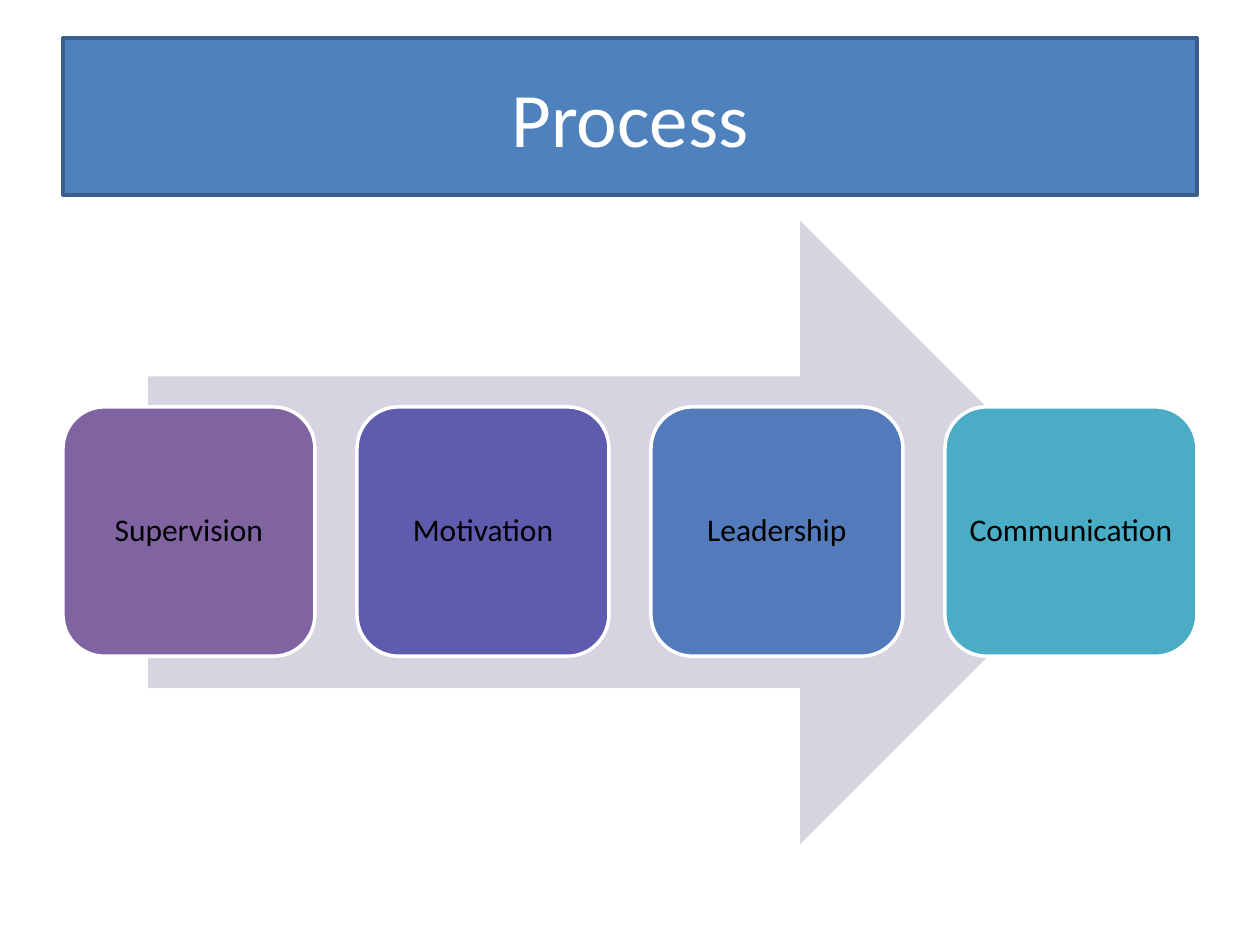
from pptx import Presentation
from pptx.dml.color import RGBColor
from pptx.enum.shapes import MSO_SHAPE as Preset
from pptx.enum.text import MSO_ANCHOR as Anchor, PP_ALIGN as Align
from pptx.util import Pt

# Content
TITLE = "Process"
STEPS = [
    ("Supervision", "8064A2"),
    ("Motivation", "5F5BAE"),
    ("Leadership", "537ABA"),
    ("Communication", "4BACC6"),
]

# Layout in points
LEFT, WIDTH = 36, 648
STEP_TOP, STEP_WIDTH, STEP_HEIGHT = 232.5, 144, 142.5
STEP_PITCH = (WIDTH - STEP_WIDTH) / (len(STEPS) - 1)


def color(value):
    return RGBColor.from_string(value)


def place(shape, left, top, width, height):
    shape.left, shape.top = Pt(left), Pt(top)
    shape.width, shape.height = Pt(width), Pt(height)


def paint(shape, fill, line=None):
    shape.fill.solid()
    shape.fill.fore_color.rgb = color(fill)
    if line:
        shape.line.color.rgb = color(line)
        shape.line.width = Pt(2)
    else:
        shape.line.fill.background()


def write(shape, text, size, font_color):
    frame = shape.text_frame
    frame.word_wrap = True
    frame.vertical_anchor = Anchor.MIDDLE
    paragraph = frame.paragraphs[0]
    paragraph.text = text
    paragraph.alignment = Align.CENTER
    paragraph.font.name = "Calibri"
    paragraph.font.size = Pt(size)
    paragraph.font.color.rgb = color(font_color)
    return paragraph


def add_preset(slide, preset, left, top, width, height, fill, line=None):
    shape = slide.shapes.add_shape(preset, Pt(left), Pt(top), Pt(width), Pt(height))
    shape.shadow.inherit = False
    paint(shape, fill, line)
    return shape


def add_step(slide, index, label, fill):
    left = LEFT + index * STEP_PITCH
    step = add_preset(slide, Preset.ROUNDED_RECTANGLE, left, STEP_TOP,
                      STEP_WIDTH, STEP_HEIGHT, fill, "FFFFFF")
    frame = step.text_frame
    frame.margin_left = frame.margin_right = Pt(5)
    frame.margin_top = frame.margin_bottom = Pt(5)
    write(step, label, 18, "000000").line_spacing = 0.9


def main():
    presentation = Presentation()
    presentation.slide_width, presentation.slide_height = Pt(720), Pt(540)
    slide = presentation.slides.add_slide(presentation.slide_layouts[5])

    # Title bar
    title = slide.shapes.title
    place(title, LEFT, 21.6, WIDTH, 90)
    paint(title, "4F81BD", "3A5F8C")
    write(title, TITLE, 44, "FFFFFF")

    # Arrow behind the steps
    add_preset(slide, Preset.RIGHT_ARROW, 84.6, 126, 550.8, 356.4, "D8D3E0")

    # Steps
    for index, (label, fill) in enumerate(STEPS):
        add_step(slide, index, label, fill)

    presentation.save("out.pptx")


if __name__ == "__main__":
    main()
